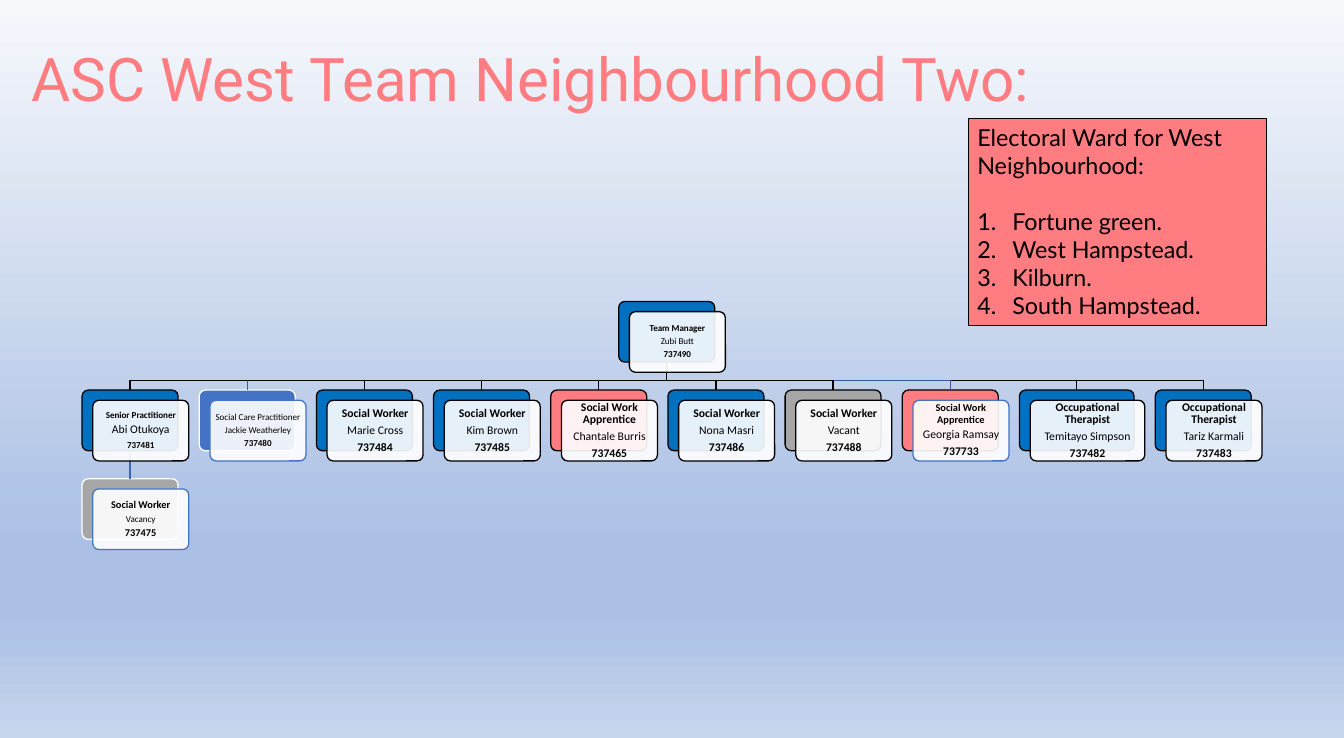
"""Build the organisation chart slide for the ASC West neighbourhood team."""
from lxml.etree import SubElement
from pptx import Presentation
from pptx.dml.color import RGBColor
from pptx.enum.shapes import MSO_CONNECTOR, MSO_SHAPE
from pptx.enum.text import MSO_ANCHOR, MSO_AUTO_SIZE, PP_ALIGN
from pptx.oxml.ns import qn
from pptx.util import Pt

COLORS = {
    "black": "000000", "white": "FFFFFF", "coral": "FF7C80", "navy": "0070C0",
    "blue": "4472C4", "grey": "A6A6A6", "link": "365B9D", "drop": "3E67B2",
}
BACKGROUND = [(0, "F6F8FC"), (74, "ABC0E4"), (83, "ABC0E4"), (100, "C7D5ED")]
TITLE = "ASC West Team Neighbourhood Two:"
WARD_HEADING = "Electoral Ward for West Neighbourhood:"
WARDS = ["Fortune green.", "West Hampstead.", "Kilburn.", "South Hampstead."]

# role, name, number, text sizes, fill, back line, front line, link
MANAGER = ("Team Manager", "Zubi Butt", "737490", (7, 7, 7), "navy", "black", "black", None)
TEAM = [
    ("Senior Practitioner", "Abi Otukoya", "737481", (7, 9, 7), "navy", "black", "black", "black"),
    ("Social Care Practitioner", "Jackie Weatherley", "737480", (7, 7, 7), "blue", "white", "blue", "link"),
    ("Social Worker", "Marie Cross", "737484", (9, 9, 9), "navy", "black", "black", "black"),
    ("Social Worker", "Kim Brown", "737485", (9, 9, 9), "navy", "black", "black", "black"),
    ("Social Work Apprentice", "Chantale Burris", "737465", (9, 9, 9), "coral", "black", "black", "black"),
    ("Social Worker", "Nona Masri", "737486", (9, 9, 9), "navy", "black", "black", "black"),
    ("Social Worker", "Vacant", "737488", (9, 9, 9), "grey", "black", "black", "black"),
    ("Social Work Apprentice", "Georgia Ramsay", "737733", (8, 9, 9), "coral", "black", "blue", "link"),
    ("Occupational Therapist", "Temitayo Simpson", "737482", (9, 9, 9), "navy", "black", "black", "black"),
    ("Occupational Therapist", "Tariz Karmali", "737483", (9, 9, 9), "navy", "black", "black", "black"),
]
REPORT = ("Social Worker", "Vacancy", "737475", (8, 7, 8), "grey", "white", "blue", "drop")
NOT_BOLD = "Social Care Practitioner"
WIDE = {"Temitayo Simpson": 88.5}

CARD_W, CARD_H, GAP = 74.1, 46.8, 16.35
LEFT, TOP, ROW_STEP = 63.4, 232.6, 68.4
SHIFT_X, SHIFT_Y = 8.25, 7.9
BEND = 14.5


def rgb(name):
    return RGBColor.from_string(COLORS[name])


def write(p, text, **fmt):
    r = p.add_run()
    r.text = text
    r.font.color.rgb = rgb(fmt.pop("color", "black"))
    for key, value in fmt.items():
        setattr(r.font, key, value)


def add_box(kind, x, y, w, h, fill, line):
    sp = slide.shapes.add_shape(kind, Pt(x), Pt(y), Pt(w), Pt(h))
    sp.shadow.inherit = False
    sp.fill.solid()
    sp.fill.fore_color.rgb = rgb(fill)
    sp.line.color.rgb = rgb(line)
    sp.line.width = Pt(1)
    return sp


def add_card(x, y, w, fill, line):
    sp = add_box(MSO_SHAPE.ROUNDED_RECTANGLE, x, y, w, CARD_H, fill, line)
    sp.adjustments[0] = 0.1
    return sp


def add_front(person, x, y, w):
    role, name, number, sizes, _, _, line, _ = person
    sp = add_card(x + SHIFT_X, y + SHIFT_Y, w, "white", line)
    color = sp.fill._xPr.find(qn("a:solidFill"))[0]
    SubElement(color, qn("a:alpha"), val="90000")
    tf = sp.text_frame
    inset = Pt(2.7 if sizes[0] == 9 else 2.1)
    frame = {"word_wrap": True, "vertical_anchor": MSO_ANCHOR.MIDDLE,
             "margin_left": inset, "margin_right": inset,
             "margin_top": inset, "margin_bottom": inset}
    for key, value in frame.items():
        setattr(tf, key, value)
    bolds = (role != NOT_BOLD, False, True)
    for i, (text, size, bold) in enumerate(zip((role, name, number), sizes, bolds)):
        p = tf.add_paragraph() if i else tf.paragraphs[0]
        para = {"alignment": PP_ALIGN.CENTER, "line_spacing": 0.9,
                "space_after": Pt(0.35 * size)}
        for key, value in para.items():
            setattr(p, key, value)
        write(p, text, name="Calibri", size=Pt(size), bold=bold)


def add_branch(start_x, end_x, y, color):
    points = [(start_x, y + BEND), (end_x, y + BEND), (end_x, y + ROW_STEP - CARD_H)]
    fb = slide.shapes.build_freeform(Pt(start_x), Pt(y))
    fb.add_line_segments([(Pt(a), Pt(b)) for a, b in points], close=False)
    sp = fb.convert_to_shape()
    sp.shadow.inherit = False
    sp.fill.background()
    sp.line.color.rgb = rgb(color)
    sp.line.width = Pt(1)


prs = Presentation()
prs.slide_width, prs.slide_height = Pt(1037.5), Pt(569.5)
slide = prs.slides.add_slide(prs.slide_layouts[5])

bg = slide.background.fill
bg.gradient()
bg.gradient_angle = 270
stops = slide._element.find(".//" + qn("a:gsLst"))
for stop in list(stops):
    stops.remove(stop)
for pos, color in BACKGROUND:
    gs = SubElement(stops, qn("a:gs"), pos=str(pos * 1000))
    SubElement(gs, qn("a:srgbClr"), val=color)

title = slide.shapes.title
place = {"left": Pt(17.3), "top": Pt(8.6), "width": Pt(895), "height": Pt(110)}
for key, value in place.items():
    setattr(title, key, value)
tf = title.text_frame
tf.auto_size, tf.vertical_anchor = MSO_AUTO_SIZE.NONE, MSO_ANCHOR.MIDDLE
p = tf.paragraphs[0]
p.alignment, p.line_spacing = PP_ALIGN.LEFT, 0.9
write(p, TITLE, name="Roboto", size=Pt(46.4), color="coral")

cards = []
x = LEFT
for person in TEAM:
    w = WIDE.get(person[1], CARD_W)
    cards.append((person, x, TOP + ROW_STEP, w))
    x += w + GAP
centres = [x + w / 2 for _, x, _, w in cards]
middle = (centres[0] + centres[-1]) / 2
cards.insert(0, (MANAGER, middle - CARD_W / 2, TOP, CARD_W))
cards.append((REPORT, LEFT, TOP + 2 * ROW_STEP, CARD_W))

backs = {person[2]: add_card(x, y, w, person[4], person[5]) for person, x, y, w in cards}
branches = list(zip(TEAM, centres))
for person, centre in branches[:0:-1] + branches[:1]:
    add_branch(middle, centre, TOP + CARD_H, person[7])

drop = slide.shapes.add_connector(MSO_CONNECTOR.STRAIGHT, 0, 0, 0, 0)
drop.begin_connect(backs[TEAM[0][2]], 2)
drop.end_connect(backs[REPORT[2]], 0)
drop.line.color.rgb = rgb(REPORT[7])
drop.line.width = Pt(1)
SubElement(drop._element.spPr, qn("a:effectLst"))

for card in cards:
    add_front(*card)

ward_box = add_box(MSO_SHAPE.RECTANGLE, 747.4, 91.4, 230.4, 159.8, "coral", "black")
tf = ward_box.text_frame
tf.word_wrap, tf.vertical_anchor = True, MSO_ANCHOR.TOP
for i, text in enumerate([WARD_HEADING] + WARDS):
    p = tf.add_paragraph() if i else tf.paragraphs[0]
    p.alignment = PP_ALIGN.LEFT
    write(p, text, name="Lato", size=Pt(18))
    if i:
        pPr = p._p.get_or_add_pPr()
        pPr.set("marL", str(Pt(27)))
        pPr.set("indent", str(-Pt(27)))
        SubElement(pPr, qn("a:buFont"), typeface="+mj-lt")
        SubElement(pPr, qn("a:buAutoNum"), type="arabicPeriod")
    else:
        p.space_after = Pt(21.6)

prs.save("out.pptx")
